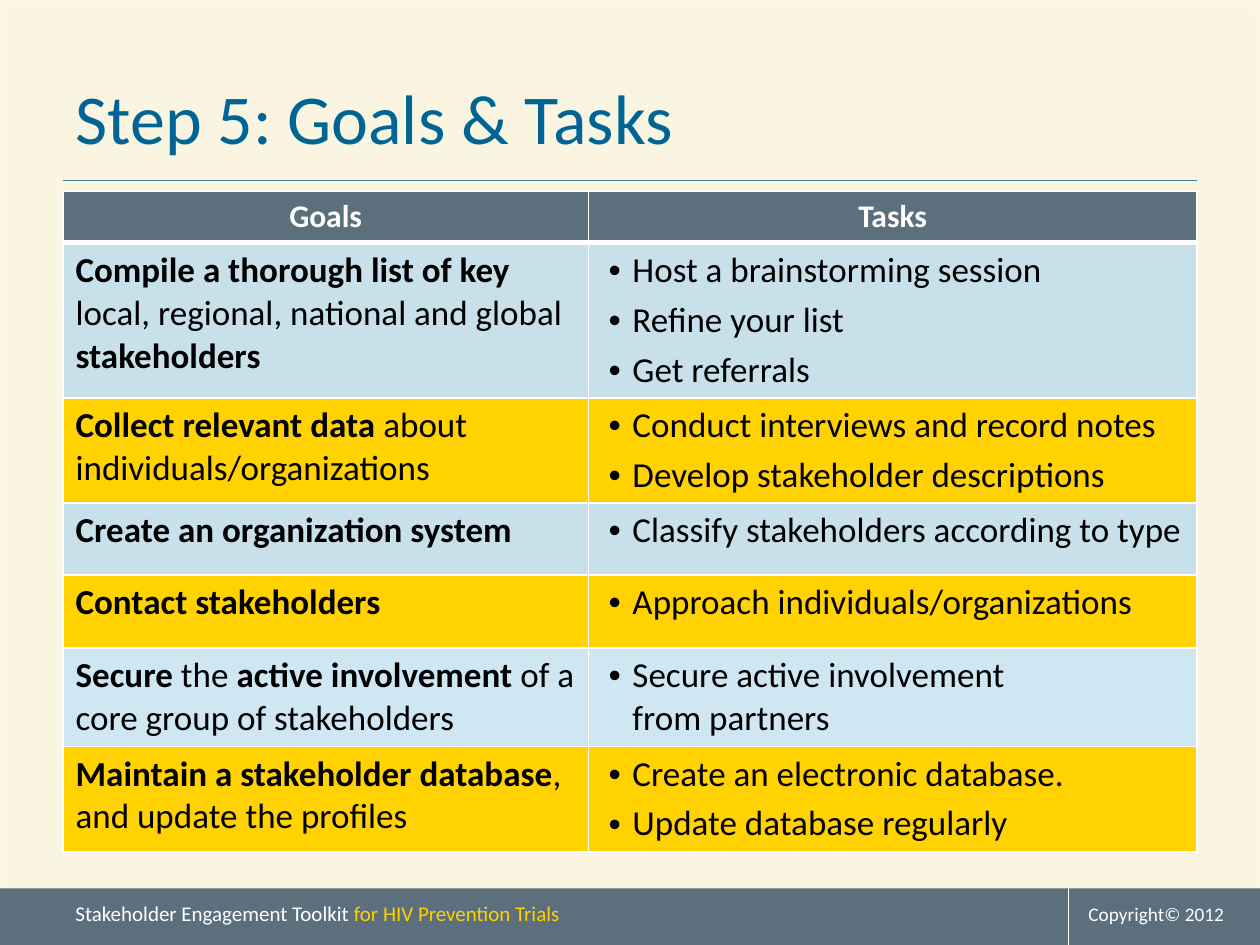
from lxml import etree
from pptx import Presentation
from pptx import util as u
from pptx.dml.color import RGBColor
from pptx.enum import shapes, text
from pptx.oxml import parse_xml
from pptx.oxml.ns import nsdecls, qn

SCALE = 9144  # EMU per px, 100 px to the inch
WHITE, BLACK, SLATE = "FFFFFF", "000000", "5C6F7C"
YELLOW, PALE, SKY = "FFD200", "C8E0E9", "CFE7F2"
BLUE, TEAL = "006595", "2C7C9F"

# Goals mark bold words with asterisks.
ROWS = [
    (121, PALE, "*Compile a thorough list of key *local, regional, national and global *stakeholders*",
     ["Host a brainstorming session", "Refine your list", "Get referrals"]),
    (82, YELLOW, "*Collect relevant data *about individuals/organizations",
     ["Conduct interviews and record notes", "Develop stakeholder descriptions"]),
    (57, PALE, "*Create an organization system*",
     ["Classify stakeholders according to type"]),
    (58, YELLOW, "*Contact stakeholders*",
     ["Approach individuals/organizations"]),
    (77, SKY, "*Secure* the *active involvement *of a core group of stakeholders",
     ["Secure active involvement \nfrom partners"]),
    (82, YELLOW, "*Maintain a stakeholder database*, and update the profiles",
     ["Create an electronic database.", "Update database regularly"]),
]


def px(*lengths):
    return [u.Emu(n * SCALE) for n in lengths]


def rgb(value):
    return RGBColor.from_string(value)


def assign(obj, values):
    for name, value in values.items():
        setattr(obj, name, value)


class Deck:
    font = "Calibri"

    def __init__(self, width, height):
        self.prs = Presentation()
        self.prs.slide_width, self.prs.slide_height = px(width, height)
        self.s = self.prs.slides.add_slide(self.prs.slide_layouts[5])

    def run(self, p, content, size, color, bold=False):
        r = p.add_run()
        r.text = content
        assign(r.font, dict(name=self.font, size=u.Pt(size), bold=bold))
        r.font.color.rgb = rgb(color)

    def title(self, content, box):
        sp = self.s.shapes.title
        self.s.shapes._spTree.append(sp._element)  # in front of the backdrop
        assign(sp, dict(zip(("left", "top", "width", "height"), px(*box))))
        assign(sp.text_frame, dict(word_wrap=True, vertical_anchor=text.MSO_ANCHOR.MIDDLE))
        p = sp.text_frame.paragraphs[0]
        p.alignment = text.PP_ALIGN.LEFT
        self.run(p, content, 40, BLUE)

    def rect(self, box, color):
        sp = self.s.shapes.add_shape(shapes.MSO_SHAPE.RECTANGLE, *px(*box))
        sp.shadow.inherit = False
        sp.fill.solid()
        sp.fill.fore_color.rgb = rgb(color)
        sp.line.fill.background()
        return sp

    def tint(self, box, color):
        """Draw a 10 % wash of colour with a soft shadow below it."""
        pr = self.rect(box, color)._element.spPr
        clr = pr.find(qn("a:solidFill"))[0]
        etree.SubElement(clr, qn("a:alpha"), val="10000")
        pr.find(qn("a:effectLst")).append(parse_xml(
            f'<a:outerShdw {nsdecls("a")} blurRad="39370" dist="22860" dir="5400000" rotWithShape="0">'
            '<a:srgbClr val="808080"><a:alpha val="35000"/></a:srgbClr></a:outerShdw>'))

    def line(self, ends, color, width):
        ln = self.s.shapes.add_connector(shapes.MSO_CONNECTOR.STRAIGHT, *px(*ends))
        ln.line.color.rgb = rgb(color)
        ln.line.width = u.Pt(width)
        etree.SubElement(ln._element.spPr, qn("a:effectLst"))

    def label(self, box, runs, size):
        tf = self.s.shapes.add_textbox(*px(*box)).text_frame
        tf.word_wrap = True
        for content, color in runs:
            self.run(tf.paragraphs[0], content, size, color)

    def cell(self, cell, color, top=1, bottom=1):
        """Give a cell its white borders, in points, and its fill."""
        tcPr = cell._tc.get_or_add_tcPr()
        for side, width in zip("LRTB", (1, 1, top, bottom)):
            tcPr.append(parse_xml(
                f'<a:ln{side} {nsdecls("a")} w="{u.Pt(width)}"><a:solidFill>'
                f'<a:srgbClr val="{WHITE}"/></a:solidFill></a:ln{side}>'))
        cell.fill.solid()
        cell.fill.fore_color.rgb = rgb(color)

    def goal(self, cell, content):
        p = cell.text_frame.paragraphs[0]
        p.space_before = u.Pt(10)
        for i, part in enumerate(content.split("*")):
            if part:
                self.run(p, part, 20, BLACK, bold=i % 2 == 1)

    def tasks(self, cell, items):
        tf = cell.text_frame
        for i, item in enumerate(items):
            p = tf.add_paragraph() if i else tf.paragraphs[0]
            p.space_before = u.Pt(4)
            pPr = p._p.get_or_add_pPr()
            indent, hang = px(25, 19)
            pPr.set("marL", str(indent))
            pPr.set("indent", str(-hang))
            etree.SubElement(pPr, qn("a:buFont"), typeface="Arial")
            etree.SubElement(pPr, qn("a:buChar"), char="•")
            for j, part in enumerate(item.split("\n")):
                if j:
                    p.add_line_break()
                self.run(p, part, 20, BLACK)

    def table(self, left, top, widths, header_height, headers, rows):
        heights = [header_height] + [row[0] for row in rows]
        box = px(left, top, sum(widths), sum(heights))
        tbl = self.s.shapes.add_table(len(heights), len(widths), *box).table
        for col, width in zip(tbl.columns, px(*widths)):
            col.width = width
        for row, height in zip(tbl.rows, px(*heights)):
            row.height = height
        for i, header in enumerate(headers):
            c = tbl.cell(0, i)
            self.cell(c, SLATE, bottom=3)
            p = c.text_frame.paragraphs[0]
            p.alignment = text.PP_ALIGN.CENTER
            self.run(p, header, 18, WHITE, bold=True)
        for i, (_, color, goal, tasks) in enumerate(rows, 1):
            for j in range(2):
                self.cell(tbl.cell(i, j), color, top=3 if i == 1 else 1)
            self.goal(tbl.cell(i, 0), goal)
            self.tasks(tbl.cell(i, 1), tasks)


def main():
    d = Deck(1000, 750)
    d.line((50, 143, 950, 143), TEAL, 0.25)
    d.tint((0, 0, 1000, 750), YELLOW)
    d.rect((0, 705, 1000, 45), SLATE)
    d.label((50, 710, 792, 30), [("Stakeholder Engagement Toolkit ", WHITE),
                                 ("for HIV Prevention Trials", YELLOW)], 12)
    d.line((848, 705, 848, 750), WHITE, 0.75)
    d.title("Step 5: Goals & Tasks", (50, 30, 900, 125))
    d.table(50, 152, (417, 483), 40, ("Goals", "Tasks"), ROWS)
    d.label((854, 711, 143, 28), [("Copyright© 2012", WHITE)], 11)
    d.prs.save("out.pptx")


if __name__ == "__main__":
    main()
